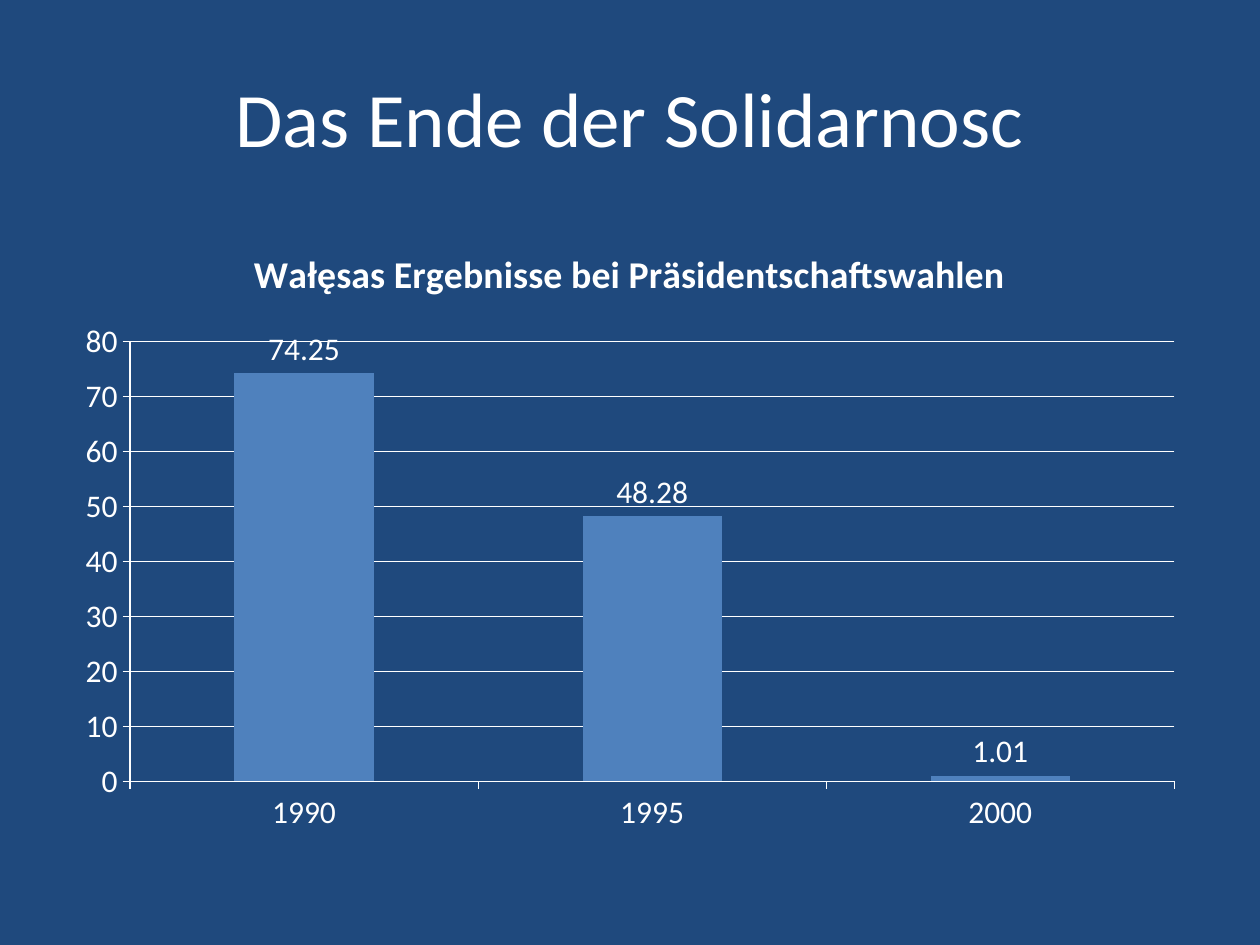
from pptx import Presentation
from pptx.chart.data import CategoryChartData
from pptx.dml.color import RGBColor
from pptx.enum.chart import XL_CHART_TYPE, XL_LABEL_POSITION, XL_TICK_MARK
from pptx.enum.text import MSO_ANCHOR, PP_ALIGN
from pptx.util import Cm, Pt

COLUMNS = XL_CHART_TYPE.COLUMN_CLUSTERED
OUTSIDE_END = XL_LABEL_POSITION.OUTSIDE_END
TICK_OUTSIDE = XL_TICK_MARK.OUTSIDE
MIDDLE = MSO_ANCHOR.MIDDLE
CENTER = PP_ALIGN.CENTER

FONT = "Calibri"
BACKGROUND, TEXT, BAR = "1F497D", "FFFFFF", "4F81BD"
TITLE_BOX = (Cm(1.27), Cm(0.76), Cm(22.86), Cm(3.18))
CHART_BOX = (Cm(1.27), Cm(4.45), Cm(22.86), Cm(12.57))
RESULTS = {"1990": 74.25, "1995": 48.28, "2000": 1.01}


def color(hex_string):
    return RGBColor.from_string(hex_string)


def format_font(font, size, bold=False):
    font.name = FONT
    font.size = Pt(size)
    font.bold = bold
    font.color.rgb = color(TEXT)


def format_line(line):
    line.color.rgb = color(TEXT)
    line.width = Pt(0.75)


def place_title(slide, box, text):
    title = slide.shapes.title
    title.left, title.top, title.width, title.height = box
    frame = title.text_frame
    frame.text = text
    frame.vertical_anchor = MIDDLE
    paragraph = frame.paragraphs[0]
    paragraph.alignment = CENTER
    format_font(paragraph.font, 44)


def add_results_chart(slide, box, title, results):
    data = CategoryChartData()
    data.categories = list(results)
    data.add_series("Series 1", list(results.values()))
    chart = slide.shapes.add_chart(COLUMNS, *box, data).chart
    format_font(chart.font, 18)
    chart.has_legend = False

    chart.has_title = True
    chart.chart_title.include_in_layout = False
    chart.chart_title.text_frame.text = title
    format_font(chart.chart_title.text_frame.paragraphs[0].font, 21.6, bold=True)

    for axis in (chart.category_axis, chart.value_axis):
        axis.major_tick_mark = TICK_OUTSIDE
        format_line(axis.format.line)
    value_axis = chart.value_axis
    value_axis.minimum_scale, value_axis.maximum_scale = 0, 80
    value_axis.major_unit = 10
    value_axis.has_major_gridlines = True
    format_line(value_axis.major_gridlines.format.line)

    plot = chart.plots[0]
    plot.gap_width = 150
    plot.vary_by_categories = False
    fill = plot.series[0].format.fill
    fill.solid()
    fill.fore_color.rgb = color(BAR)
    plot.has_data_labels = True
    labels = plot.data_labels
    labels.show_value = True
    labels.position = OUTSIDE_END
    format_font(labels.font, 18)


def main():
    presentation = Presentation()
    presentation.slide_width, presentation.slide_height = Cm(25.4), Cm(19.05)
    title_only = presentation.slide_layouts.get_by_name("Title Only")
    slide = presentation.slides.add_slide(title_only)
    slide.background.fill.solid()
    slide.background.fill.fore_color.rgb = color(BACKGROUND)
    place_title(slide, TITLE_BOX, "Das Ende der Solidarnosc")
    add_results_chart(
        slide, CHART_BOX, "Wałęsas Ergebnisse bei Präsidentschaftswahlen", RESULTS
    )
    presentation.save("out.pptx")


if __name__ == "__main__":
    main()
